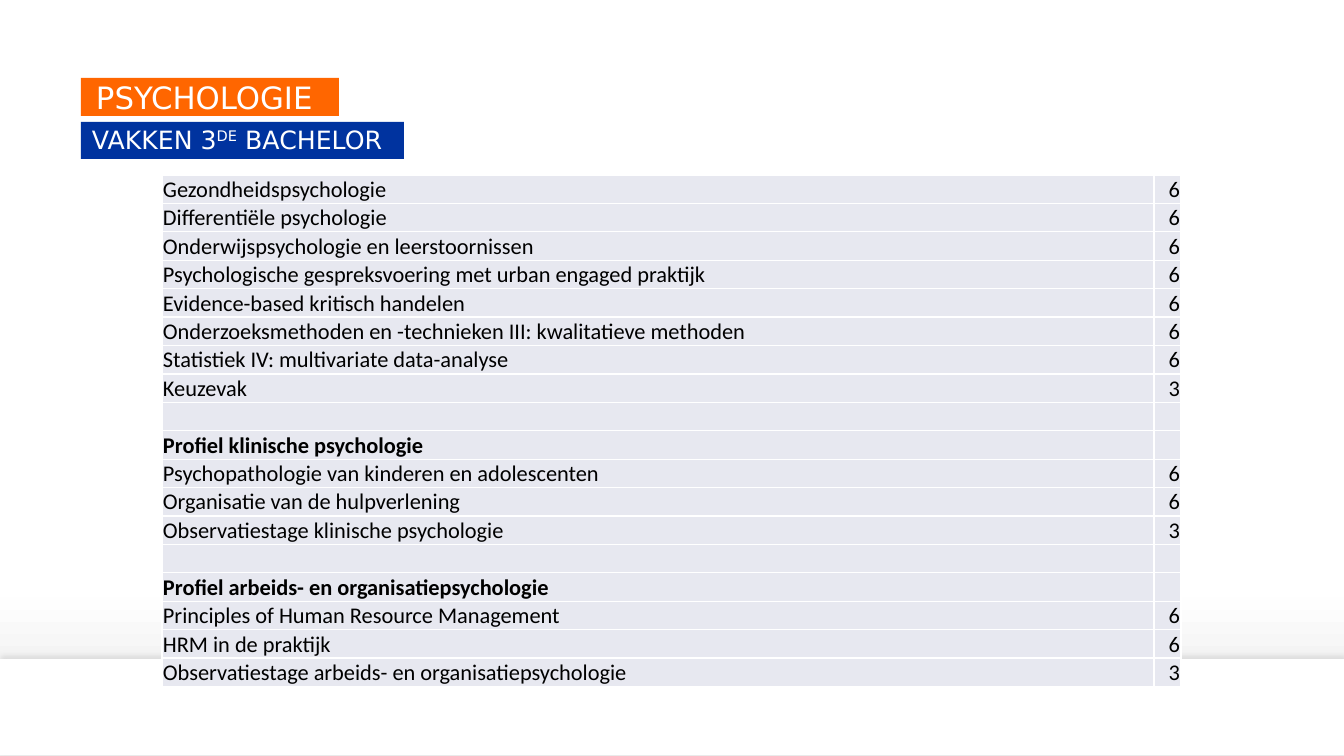
from copy import deepcopy

from lxml import etree
from pptx import Presentation
from pptx.dml.color import RGBColor
from pptx.enum.shapes import MSO_SHAPE
from pptx.enum.text import MSO_ANCHOR, MSO_AUTO_SIZE, PP_ALIGN
from pptx.oxml import parse_xml
from pptx.oxml.ns import nsdecls, qn
from pptx.util import Pt

RECT = MSO_SHAPE.RECTANGLE
LEFT, RIGHT = PP_ALIGN.LEFT, PP_ALIGN.RIGHT
BOTTOM, MIDDLE = MSO_ANCHOR.BOTTOM, MSO_ANCHOR.MIDDLE
NO_FIT = MSO_AUTO_SIZE.NONE

# Content: course and credits; headings have no credits
TITLE = "PSYCHOLOGIE"
SUBTITLE = [("VAKKEN 3", 0), ("DE", 30), (" BACHELOR", 0)]
COURSES = [
    ("Gezondheidspsychologie", "6"),
    ("Differentiële psychologie", "6"),
    ("Onderwijspsychologie en leerstoornissen", "6"),
    ("Psychologische gespreksvoering met urban engaged praktijk", "6"),
    ("Evidence-based kritisch handelen", "6"),
    ("Onderzoeksmethoden en -technieken III: kwalitatieve methoden", "6"),
    ("Statistiek IV: multivariate data-analyse", "6"),
    ("Keuzevak", "3"),
    ("", ""),
    ("Profiel klinische psychologie", ""),
    ("Psychopathologie van kinderen en adolescenten", "6"),
    ("Organisatie van de hulpverlening", "6"),
    ("Observatiestage klinische psychologie", "3"),
    ("", ""),
    ("Profiel arbeids- en organisatiepsychologie", ""),
    ("Principles of Human Resource Management", "6"),
    ("HRM in de praktijk", "6"),
    ("Observatiestage arbeids- en organisatiepsychologie", "3"),
]
BACKDROP = [(0, "FFFFFF"), (0.79, "FEFEFE"), (0.92, "EDEDED")]
COLS = (992, 27)
ROW = 28
WIDE, HIGH = 1344, 756


def px(n):
    return round(n * 914400 / 100.8)


def rgb(code):
    return RGBColor.from_string(code)


def paint(shape, code):
    shape.fill.solid()
    shape.fill.fore_color.rgb = rgb(code)


def style(font, face, size, code, bold=False):
    font.name, font.size, font.bold = face, Pt(size), bold
    font.color.rgb = rgb(code)


def place(shape, *box):
    shape.left, shape.top, shape.width, shape.height = map(px, box)


def inset(frame, left, top, right, bottom):
    frame.margin_left, frame.margin_top = px(left), px(top)
    frame.margin_right, frame.margin_bottom = px(right), px(bottom)


def label(shape, code, size, pad, anchor, space):
    """Format a coloured heading bar."""
    paint(shape, code)
    frame = shape.text_frame
    frame.word_wrap, frame.auto_size = True, NO_FIT
    frame.vertical_anchor = anchor
    inset(frame, *pad)
    para = frame.paragraphs[0]
    para.alignment, para.line_spacing = LEFT, space
    for run in para.runs:
        style(run.font, "DejaVu Sans", size, "FFFFFF")


def edge(cell):
    """Give a cell thin white borders, ahead of its fill."""
    for i, side in enumerate(("lnL", "lnR", "lnT", "lnB")):
        line = parse_xml(
            f'<a:{side} {nsdecls("a")} w="12700"><a:solidFill>'
            f'<a:srgbClr val="FFFFFF"/></a:solidFill></a:{side}>')
        cell._tc.get_or_add_tcPr().insert(i, line)


deck = Presentation()
deck.slide_width, deck.slide_height = px(WIDE), px(HIGH)
slide = deck.slides.add_slide(deck.slide_layouts[5])
shapes = slide.shapes

# Background fade
fill = slide.background.fill
fill.gradient()
fill.gradient_angle = 270
first = fill.gradient_stops[0]._gs
first.addnext(deepcopy(first))
for stop, (pos, code) in zip(fill.gradient_stops, BACKDROP):
    stop.position, stop.color.rgb = pos, rgb(code)

# White floor with a soft shadow above it
floor = shapes.add_shape(RECT, 0, px(659), px(WIDE), px(96))
paint(floor, "FFFFFF")
floor.line.fill.background()
floor._element.spPr.append(parse_xml(
    f'<a:effectLst {nsdecls("a")}><a:outerShdw blurRad="50800" dist="38100" '
    'dir="16200000" rotWithShape="0"><a:srgbClr val="000000">'
    '<a:alpha val="10000"/></a:srgbClr></a:outerShdw></a:effectLst>'))
shapes._spTree.insert(2, floor._element)

# Title bars
title = shapes.title
place(title, 81, 78, 258, 38)
title.text_frame.text = TITLE
label(title, "FF6600", 22, (15, 4, 16, 0), BOTTOM, 0.9)

sub = shapes.add_textbox(px(81), px(122), px(323), px(37))
para = sub.text_frame.paragraphs[0]
for text, rise in SUBTITLE:
    run = para.add_run()
    run.text = text
    if rise:
        run.font._element.set("baseline", str(rise * 1000))
label(sub, "00339F", 18, (11, 4, 10, 4), MIDDLE, 0.95)

# Course table
grid = shapes.add_table(len(COURSES), len(COLS), px(162), px(175),
                        px(sum(COLS)), px(ROW * len(COURSES))).table
grid.first_row = grid.horz_banding = False
for col, width in zip(grid.columns, COLS):
    col.width = px(width)
for r, course in enumerate(COURSES):
    grid.rows[r].height = px(ROW)
    for c, text in enumerate(course):
        cell = grid.cell(r, c)
        paint(cell, "E7E8F0")
        edge(cell)
        inset(cell, 1, 1, 1, 0)
        cell.vertical_anchor = BOTTOM
        para = cell.text_frame.paragraphs[0]
        para.text = text
        para.alignment = RIGHT if c else LEFT
        for run in para.runs:
            style(run.font, "Calibri", 16, "000000", not course[1])
        if not text:
            etree.SubElement(para._p, qn("a:endParaRPr"), sz="1600")

deck.save("out.pptx")
